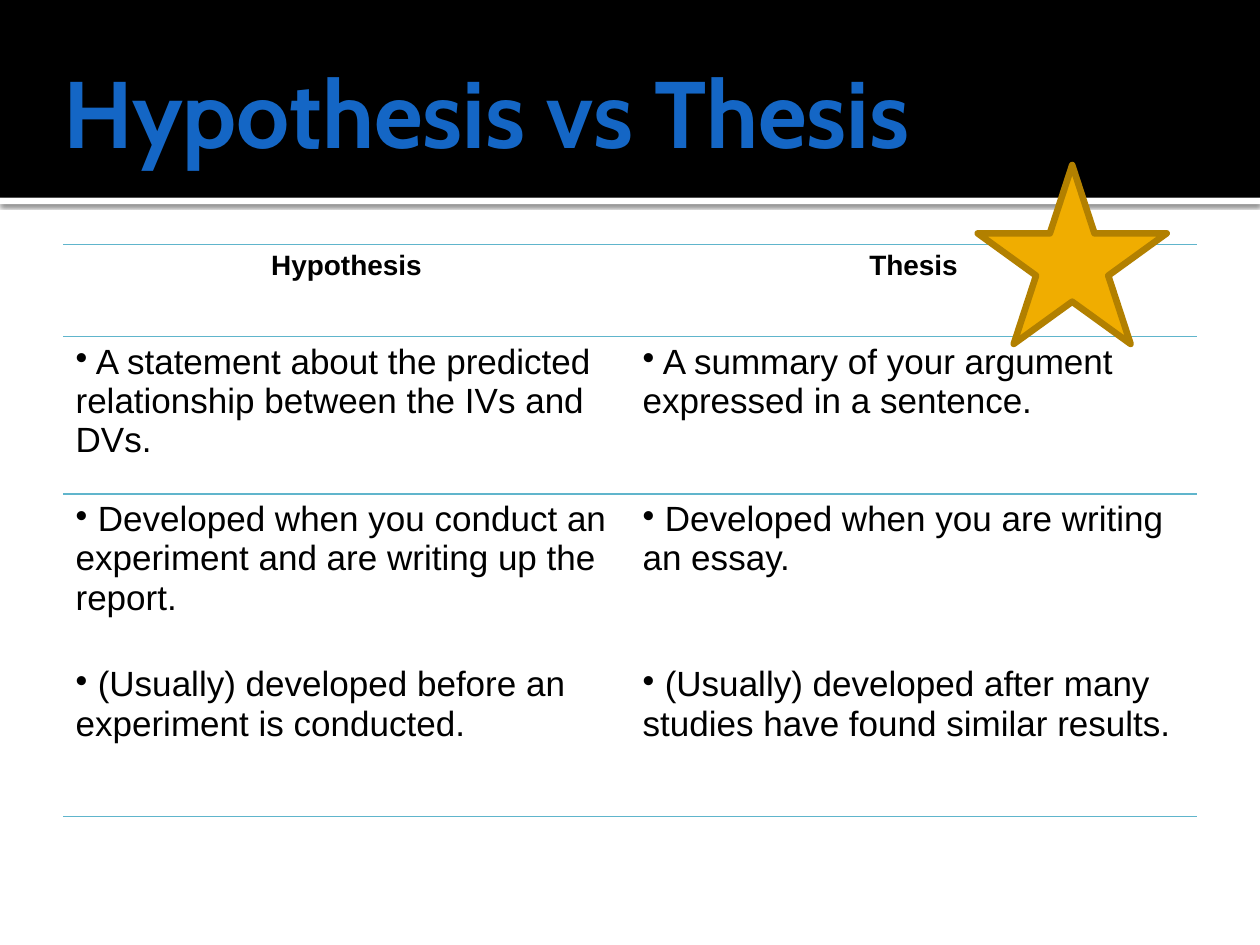
from dataclasses import dataclass

from lxml import etree
from pptx import Presentation
from pptx.dml.color import RGBColor
from pptx.enum.shapes import MSO_SHAPE
from pptx.enum.text import MSO_ANCHOR, PP_ALIGN
from pptx.oxml import parse_xml
from pptx.oxml.ns import nsdecls, qn
from pptx.util import Inches, Pt

RECTANGLE, STAR = MSO_SHAPE.RECTANGLE, MSO_SHAPE.STAR_5_POINT
MIDDLE = MSO_ANCHOR.MIDDLE
LEFT, CENTER = PP_ALIGN.LEFT, PP_ALIGN.CENTER
TITLE_ONLY = 5
NO_STYLE_NO_GRID = "{2D5ABB26-0587-4C30-8999-92F81FD0307C}"

TITLE = "Hypothesis vs Thesis"
HEADERS = ["Hypothesis", "Thesis"]
COMPARISONS = [
    ["A statement about the predicted relationship between the IVs and DVs.",
     "A summary of your argument expressed in a sentence."],
    ["Developed when you conduct an experiment and are writing up the report.",
     "Developed when you are writing an essay."],
    ["(Usually) developed before an experiment is conducted.",
     "(Usually) developed after many studies have found similar results."],
]
ROW_HEIGHTS = [0.73, 1.25, 1.31, 1.25]

SLIDE_WIDTH, SLIDE_HEIGHT = 10, 7.5
MARGIN = 0.5
CONTENT_WIDTH = SLIDE_WIDTH - 2 * MARGIN
BANNER_HEIGHT, STRIP_HEIGHT = 1.57, 0.05
TABLE_TOP = 1.94


@dataclass(frozen=True)
class Theme:
    title_font: str = "Cabin"
    body_font: str = "Arial"
    title_size: int = 54
    header_size: int = 16
    body_size: int = 20
    title: str = "1466C5"
    text: str = "000000"
    banner: str = "000000"
    strip: str = "FFFFFF"
    rule: str = "60B5CC"
    star: str = "F0AD00"
    star_line: str = "B28000"


THEME = Theme()


def add_filled_shape(slide, preset, box, color):
    shape = slide.shapes.add_shape(preset, *map(Inches, box))
    shape.shadow.inherit = False
    shape.fill.solid()
    shape.fill.fore_color.rgb = RGBColor.from_string(color)
    shape.line.fill.background()
    return shape


def add_text(paragraph, text, font, size, color, bold):
    run = paragraph.add_run()
    run.text = text
    run.font.name = font
    run.font.size = Pt(size)
    run.font.bold = bold
    run.font.color.rgb = RGBColor.from_string(color)


def add_drop_shadow(shape):
    effects = shape.element.spPr.find(qn("a:effectLst"))
    effects.append(parse_xml(
        f'<a:outerShdw {nsdecls("a")} blurRad="{Pt(2.5)}" dist="{Pt(0.8)}" '
        'dir="5400000" algn="t" rotWithShape="0"><a:srgbClr val="000000">'
        '<a:alpha val="60000"/></a:srgbClr></a:outerShdw>'))


def add_bullet(paragraph):
    properties = paragraph._p.get_or_add_pPr()
    properties.set("marL", "0")
    properties.set("indent", "0")
    etree.SubElement(properties, qn("a:buChar")).set("char", "•")


def set_rules(cell, sides):
    """Draw horizontal rules on the given sides: lnT above, lnB below."""
    properties = cell._tc.get_or_add_tcPr()
    for position, side in enumerate(sides):
        properties.insert(position, parse_xml(
            f'<a:{side} {nsdecls("a")} w="{Pt(1)}"><a:solidFill>'
            f'<a:srgbClr val="{THEME.rule}"/></a:solidFill></a:{side}>'))


def add_banner(slide):
    strip = add_filled_shape(
        slide, RECTANGLE, (0, BANNER_HEIGHT, SLIDE_WIDTH, STRIP_HEIGHT), THEME.strip)
    add_drop_shadow(strip)
    banner = add_filled_shape(
        slide, RECTANGLE, (0, 0, SLIDE_WIDTH, BANNER_HEIGHT), THEME.banner)

    title = slide.shapes.title
    for shape in (strip, banner):
        title.element.addprevious(shape.element)
    title.left, title.top = Inches(MARGIN), Inches(0.17)
    title.width, title.height = Inches(CONTENT_WIDTH), Inches(1.37)
    frame = title.text_frame
    frame.margin_left = frame.margin_right = frame.margin_bottom = 0
    frame.margin_top = Inches(0.05)
    frame.vertical_anchor = MIDDLE
    paragraph = frame.paragraphs[0]
    paragraph.alignment = LEFT
    add_text(paragraph, TITLE, THEME.title_font, THEME.title_size, THEME.title, True)


def add_comparison_table(slide):
    rows = [HEADERS] + COMPARISONS
    frame = slide.shapes.add_table(
        len(rows), len(HEADERS), Inches(MARGIN), Inches(TABLE_TOP),
        Inches(CONTENT_WIDTH), Inches(sum(ROW_HEIGHTS)))
    table = frame.table
    table.first_row = table.horz_banding = False
    table._tbl.tblPr.find(qn("a:tableStyleId")).text = NO_STYLE_NO_GRID

    for row_index, (texts, height) in enumerate(zip(rows, ROW_HEIGHTS)):
        table.rows[row_index].height = Inches(height)
        is_header = row_index == 0
        sides = ["lnT"] if row_index <= 1 else []
        if is_header or row_index == len(rows) - 1:
            sides.append("lnB")
        for column_index, text in enumerate(texts):
            cell = table.cell(row_index, column_index)
            cell.fill.background()
            set_rules(cell, sides)
            paragraph = cell.text_frame.paragraphs[0]
            paragraph.alignment = CENTER if is_header else LEFT
            if not is_header:
                add_bullet(paragraph)
            add_text(paragraph, text if is_header else f" {text}", THEME.body_font,
                     THEME.header_size if is_header else THEME.body_size,
                     THEME.text, is_header)


def add_star(slide):
    star = add_filled_shape(slide, STAR, (7.76, 1.31, 1.5, 1.42), THEME.star)
    star.line.color.rgb = RGBColor.from_string(THEME.star_line)
    star.line.width = Pt(3.78)
    etree.SubElement(star.element.spPr.find(qn("a:ln")), qn("a:round"))


def main():
    presentation = Presentation()
    presentation.slide_width = Inches(SLIDE_WIDTH)
    presentation.slide_height = Inches(SLIDE_HEIGHT)
    slide = presentation.slides.add_slide(presentation.slide_layouts[TITLE_ONLY])
    add_banner(slide)
    add_comparison_table(slide)
    add_star(slide)
    presentation.save("out.pptx")


if __name__ == "__main__":
    main()
